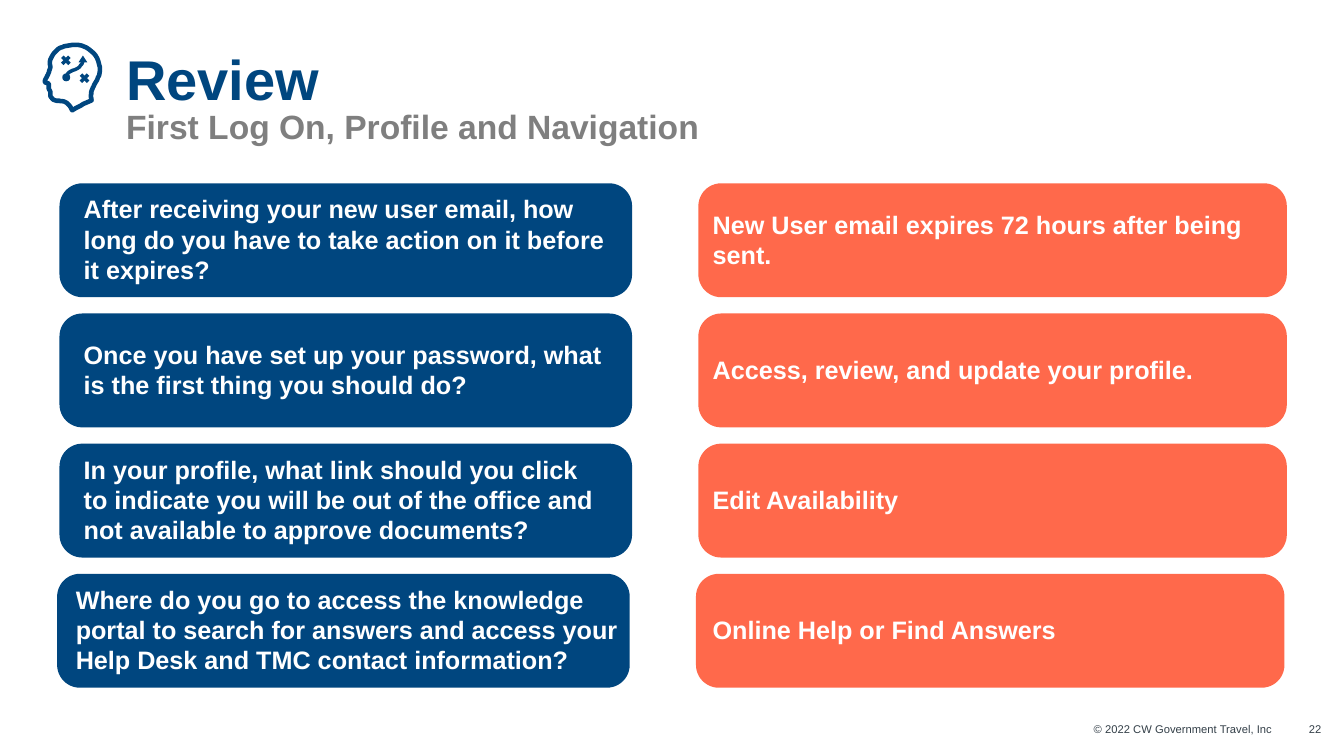
from pptx import Presentation
from pptx.dml.color import RGBColor
from pptx.enum.shapes import MSO_CONNECTOR, MSO_SHAPE
from pptx.enum.text import MSO_ANCHOR, PP_ALIGN
from pptx.oxml.ns import qn
from pptx.util import Cm, Pt
from lxml.etree import SubElement

NAVY = RGBColor(0x00, 0x46, 0x7F)
CORAL = RGBColor(0xFF, 0x69, 0x4B)
GRAY = RGBColor(0x7F, 0x7F, 0x7F)
SLATE = RGBColor(0x33, 0x3F, 0x48)
WHITE = RGBColor(0xFF, 0xFF, 0xFF)

REVIEW = [
    ("After receiving your new user email, how long do you have to take action on it before it expires?",
     "New User email expires 72 hours after being sent."),
    ("Once you have set up your password, what is the first thing you should do?",
     "Access, review, and update your profile."),
    ("In your profile, what link should you click to indicate you will be out of the office "
     "and not available to approve documents?",
     "Edit Availability"),
    ("Where do you go to access the knowledge portal to search for answers and access your "
     "Help Desk and TMC contact information?",
     "Online Help or Find Answers"),
]
HEAD = [
    (231, 253), (229, 246), (229, 241), (230, 236), (231, 226), (234, 221), (239, 211),
    (246, 198), (257, 183), (250, 163), (246, 140), (229, 124), (211, 117),
    (198, 112), (183, 112), (166, 116), (152, 119), (145, 124), (137, 133),
    (127, 145), (124, 155), (127, 168), (127, 175), (124, 178), (122, 185),
    (119, 193), (113, 201), (113, 206), (113, 210), (123, 208), (123, 213),
    (123, 221), (122, 224), (126, 229), (128, 239), (124, 241), (132, 249),
    (137, 254), (147, 254), (157, 255), (170, 257), (177, 267), (182, 278),
    (193, 269), (213, 262), (231, 253),
]
ROUTE = [(168, 192), (171, 178), (187, 178), (196, 172), (203, 167), (208, 160), (210, 150)]


def bezier_points(controls, steps=8):
    points = [controls[0]]
    for first in range(0, len(controls) - 1, 3):
        corners = controls[first:first + 4]
        for step in range(1, steps + 1):
            t = step / steps
            weights = ((1 - t) ** 3, 3 * t * (1 - t) ** 2, 3 * t * t * (1 - t), t ** 3)
            points.append(tuple(sum(w * corner[axis] for w, corner in zip(weights, corners))
                                for axis in (0, 1)))
    return points


class ReviewSlide:
    font_name = "Arial"

    def __init__(self, slide):
        self.shapes = slide.shapes

    def shape(self, preset, left, top, width, height, color):
        shape = self.shapes.add_shape(preset, Cm(left), Cm(top), Cm(width), Cm(height))
        shape.shadow.inherit = False
        shape.fill.solid()
        shape.fill.fore_color.rgb = color
        shape.line.fill.background()
        return shape

    def card(self, left, top, width, height, color):
        self.shape(MSO_SHAPE.ROUNDED_RECTANGLE, left, top, width, height, color).adjustments[0] = 0.2

    def curve(self, controls, close, weight):
        start, *rest = bezier_points(controls)
        builder = self.shapes.build_freeform(*start, scale=Cm(0.01))
        builder.add_line_segments(rest, close=close)
        outline = builder.convert_to_shape()
        outline.shadow.inherit = False
        outline.fill.background()
        outline.line.color.rgb = NAVY
        outline.line.width = Pt(weight)

    def cross(self, x, y, arm=0.09):
        for slope in (1, -1):
            stroke = self.shapes.add_connector(
                MSO_CONNECTOR.STRAIGHT, Cm(x - arm), Cm(y - arm * slope),
                Cm(x + arm), Cm(y + arm * slope))
            stroke.line.color.rgb = NAVY
            stroke.line.width = Pt(2.5)
            SubElement(stroke._element.spPr, qn("a:effectLst"))

    def style(self, font, size, color, bold):
        font.name = self.font_name
        font.size = Pt(size)
        font.bold = bold
        font.color.rgb = color

    def frame(self, left, top, width, height, anchor):
        frame = self.shapes.add_textbox(Cm(left), Cm(top), Cm(width), Cm(height)).text_frame
        frame.word_wrap = True
        frame.vertical_anchor = anchor
        frame.margin_left = frame.margin_right = frame.margin_top = frame.margin_bottom = 0
        return frame

    def text(self, words, left, top, width, height, size, color, bold=False,
             align=PP_ALIGN.LEFT, anchor=MSO_ANCHOR.TOP):
        paragraph = self.frame(left, top, width, height, anchor).paragraphs[0]
        paragraph.text = words
        paragraph.alignment = align
        self.style(paragraph.font, size, color, bold)

    def heading(self, title, subtitle, left, top, width, height):
        paragraph = self.frame(left, top, width, height, MSO_ANCHOR.BOTTOM).paragraphs[0]
        paragraph.line_spacing = 0.85
        title_run = paragraph.add_run()
        title_run.text = title
        self.style(title_run.font, 40, NAVY, True)
        paragraph.add_line_break()
        subtitle_run = paragraph.add_run()
        subtitle_run.text = subtitle
        self.style(subtitle_run.font, 24, GRAY, True)

    def strategy_icon(self):
        self.curve(HEAD, True, 3.25)
        self.curve(ROUTE, False, 2.5)
        self.shape(MSO_SHAPE.OVAL, 1.57, 1.85, 0.2, 0.2, NAVY)
        self.shape(MSO_SHAPE.ISOSCELES_TRIANGLE, 1.98, 1.4, 0.22, 0.17, NAVY)
        self.cross(1.66, 1.52)
        self.cross(2.13, 1.97)


def main():
    presentation = Presentation()
    presentation.slide_width = Cm(33.87)
    presentation.slide_height = Cm(19.05)
    review = ReviewSlide(presentation.slides.add_slide(presentation.slide_layouts[6]))

    review.strategy_icon()
    review.heading("Review", "First Log On, Profile and Navigation", 3.18, 1.35, 29.29, 2.34)

    for row, (question, answer) in enumerate(REVIEW):
        top = 4.62 + row * 3.28
        last = row == len(REVIEW) - 1
        shift = -0.06 if last else 0
        question_left, question_width = (1.91, 14.17) if last else (2.11, 13.13)
        for words, card_left, card_width, color, text_left, text_width in (
            (question, 1.5, 14.43, NAVY, question_left, question_width),
            (answer, 17.6, 14.83, CORAL, 17.96, 14.48),
        ):
            review.card(card_left + shift, top, card_width, 2.87, color)
            review.text(words, text_left, top - 0.02, text_width, 2.85, 18, WHITE,
                        bold=True, anchor=MSO_ANCHOR.MIDDLE)

    review.text("© 2022 CW Government Travel, Inc", 21.29, 18.21, 10.77, 0.36, 8, SLATE,
                align=PP_ALIGN.RIGHT)
    review.text("22", 32.72, 18.21, 0.58, 0.36, 8, SLATE, align=PP_ALIGN.RIGHT)
    presentation.save("out.pptx")


if __name__ == "__main__":
    main()
